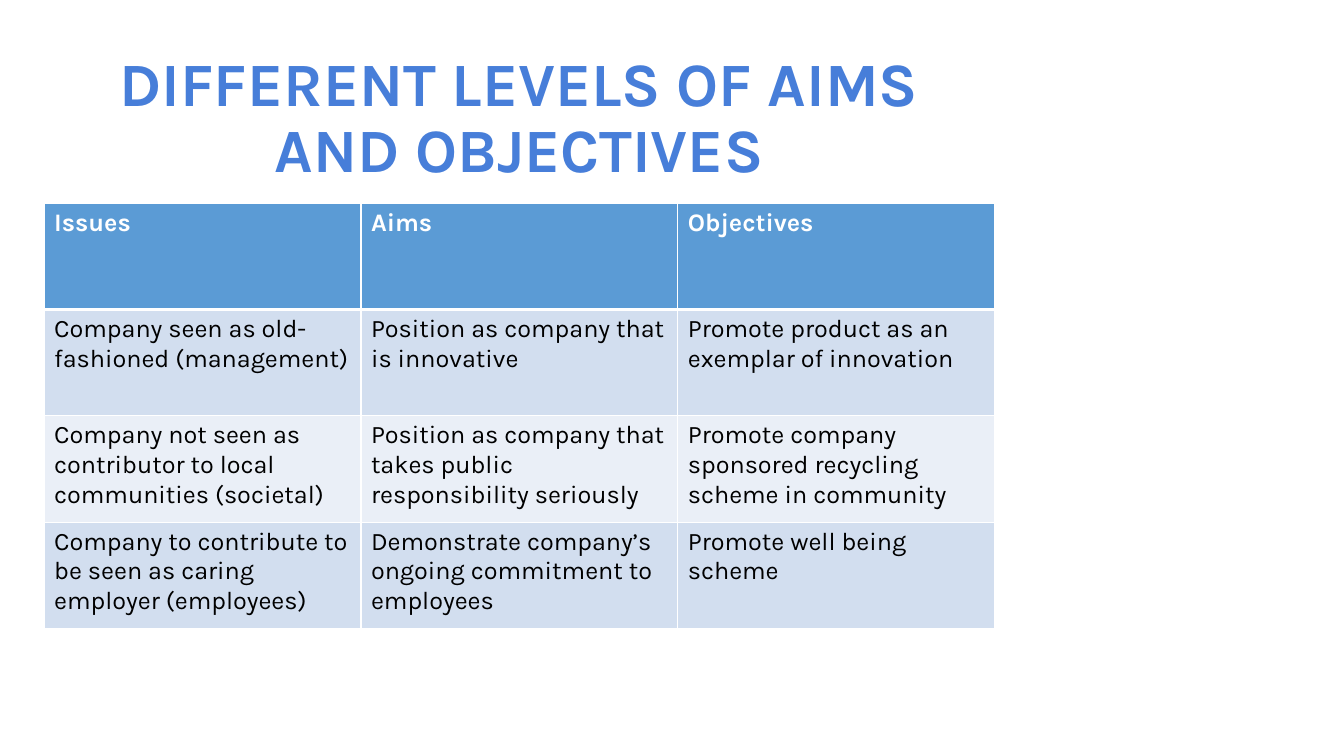
from dataclasses import dataclass
from typing import Any

from lxml import etree
from pptx import Presentation
from pptx.dml import color
from pptx.enum import text
from pptx.oxml import ns
from pptx.util import Pt


@dataclass(frozen=True)
class Theme:
    face: str = "Karla"
    head: str = "477ED9"
    bar: str = "5B9BD5"
    odd: str = "D2DEEF"
    even: str = "EAEFF7"
    white: str = "FFFFFF"
    black: str = "000000"
    big: float = 44
    small: float = 18


@dataclass(frozen=True)
class Row:
    words: tuple[str, str, str]
    fill: str
    ink: str
    bold: bool = False
    top: float = 1
    base: float = 1


THEME = Theme()
LEFT, WIDTH = 31.5, 679
HEAD_TOP, HEAD_HIGH = 33, 104.5
GRID_TOP, ROW_HIGH = 145, 76

TITLE = "DIFFERENT LEVELS OF AIMS AND OBJECTIVES"
ROWS = (
    Row(("Issues", "Aims", "Objectives"),
        THEME.bar, THEME.white, bold=True, base=3),
    Row(("Company seen as old-fashioned (management)",
         "Position as company that is innovative",
         "Promote product as an exemplar of innovation"),
        THEME.odd, THEME.black, top=3),
    Row(("Company not seen as contributor to local communities (societal)",
         "Position as company that takes public responsibility seriously",
         "Promote company sponsored recycling scheme in community"),
        THEME.even, THEME.black),
    Row(("Company to contribute to be seen as caring employer (employees)",
         "Demonstrate company’s ongoing commitment to employees",
         "Promote well being scheme"),
        THEME.odd, THEME.black),
)


def apply(item: Any, values: dict[str, Any]) -> None:
    for name, value in values.items():
        setattr(item, name, value)


def write(frame: Any, words: str, size: float, ink: str, bold: bool) -> Any:
    para = frame.paragraphs[0]
    run = para.add_run()
    run.text = words
    apply(run.font, {"name": THEME.face, "size": Pt(size), "bold": bold})
    run.font.color.rgb = color.RGBColor.from_string(ink)
    return para


def edge(cell: Any, side: str, size: float) -> None:
    props = cell._tc.get_or_add_tcPr()
    line = etree.SubElement(props, ns.qn(f"a:ln{side}"), w=str(Pt(size)))
    fill = etree.SubElement(line, ns.qn("a:solidFill"))
    etree.SubElement(fill, ns.qn("a:srgbClr"), val=THEME.white)


def add_title(slide: Any) -> None:
    box = slide.shapes.add_textbox(
        Pt(LEFT), Pt(HEAD_TOP), Pt(WIDTH), Pt(HEAD_HIGH))
    frame = box.text_frame
    apply(frame, {"word_wrap": True,
                  "vertical_anchor": text.MSO_ANCHOR.MIDDLE})
    para = write(frame, TITLE, THEME.big, THEME.head, True)
    apply(para, {"alignment": text.PP_ALIGN.CENTER, "line_spacing": 0.9})


def add_grid(slide: Any, rows: tuple[Row, ...]) -> None:
    count = len(rows[0].words)
    table = slide.shapes.add_table(
        len(rows), count, Pt(LEFT), Pt(GRID_TOP),
        Pt(WIDTH), Pt(ROW_HIGH * len(rows))).table
    for y, row in enumerate(rows):
        for x, words in enumerate(row.words):
            cell = table.cell(y, x)
            sides = {"L": 1, "R": 1, "T": row.top, "B": row.base}
            for side, size in sides.items():
                edge(cell, side, size)
            cell.fill.solid()
            cell.fill.fore_color.rgb = color.RGBColor.from_string(row.fill)
            write(cell.text_frame, words, THEME.small, row.ink, row.bold)


def main() -> None:
    deck = Presentation()
    apply(deck, {"slide_width": Pt(960), "slide_height": Pt(540)})
    slide = deck.slides.add_slide(deck.slide_layouts[6])
    add_title(slide)
    add_grid(slide, ROWS)
    deck.save("out.pptx")


if __name__ == "__main__":
    main()
